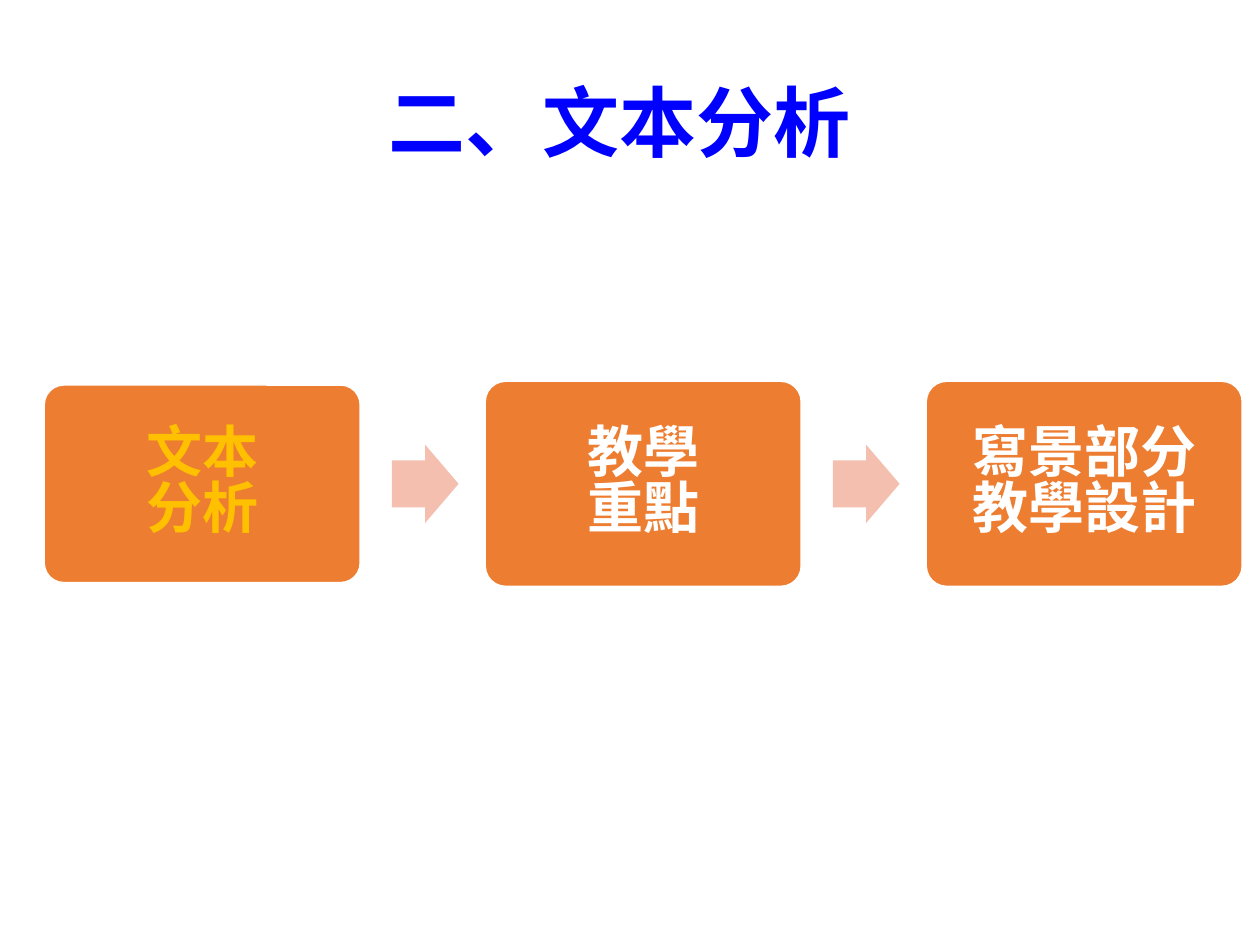
from pptx import Presentation
from pptx.dml.color import RGBColor
from pptx.enum.shapes import MSO_SHAPE
from pptx.enum.text import MSO_ANCHOR, MSO_AUTO_SIZE, PP_ALIGN
from pptx.oxml.ns import qn
from pptx.util import Inches, Pt

FONT = "Noto Sans CJK SC"
COLORS = {
    "title": "0000FF",
    "step": "ED7D31",
    "arrow": "F4BFAE",
    "active": "FFC000",
    "white": "FFFFFF",
}
# Lines of text, text colour and height of each step
STEPS = [
    (["文本", "分析"], "active", 1.57),
    (["教學", "重點"], "white", 1.63),
    (["寫景部分教學設計"], "white", 1.63),
]


def rgb(name):
    return RGBColor.from_string(COLORS[name])


def format_paragraph(p, size, color, spacing):
    p.alignment = PP_ALIGN.CENTER
    p.line_spacing = spacing
    p.font.size = Pt(size)
    p.font.bold = True
    p.font.color.rgb = rgb(color)
    p.font.name = FONT
    # East Asian text needs its own typeface element
    props = p._p.pPr.find(qn("a:defRPr"))
    ea = props.makeelement(qn("a:ea"), {"typeface": FONT})
    props.find(qn("a:latin")).addnext(ea)


def add_title(s, text, left, top, width, height):
    title = s.shapes.title
    title.left, title.top = Inches(left), Inches(top)
    title.width, title.height = Inches(width), Inches(height)
    tf = title.text_frame
    tf.text = text
    tf.auto_size = MSO_AUTO_SIZE.NONE
    tf.vertical_anchor = MSO_ANCHOR.TOP
    format_paragraph(tf.paragraphs[0], 44, "title", 0.8)


def add_block(s, kind, left, middle, width, height, fill):
    sp = s.shapes.add_shape(kind, Inches(left), Inches(middle - height / 2),
                            Inches(width), Inches(height))
    sp.shadow.inherit = False
    sp.fill.solid()
    sp.fill.fore_color.rgb = rgb(fill)
    sp.line.fill.background()
    return sp


def add_step(s, lines, color, left, middle, width, height):
    sp = add_block(s, MSO_SHAPE.ROUNDED_RECTANGLE, left, middle, width, height, "step")
    sp.adjustments[0] = 0.1
    sp.line.color.rgb = rgb("white")
    sp.line.width = Pt(1)
    tf = sp.text_frame
    tf.word_wrap = True
    tf.vertical_anchor = MSO_ANCHOR.MIDDLE
    tf.margin_left = tf.margin_right = Inches(0.18)
    tf.margin_top = tf.margin_bottom = Inches(0.18)
    tf.text = "\n".join(lines)
    for p in tf.paragraphs:
        format_paragraph(p, 32, color, 0.83)


def add_process(s, left, middle, step_width, gap):
    arrow_width, arrow_height = 0.53, 0.62
    for i, (lines, color, height) in enumerate(STEPS):
        x = left + i * (step_width + gap)
        if i:
            arrow = add_block(s, MSO_SHAPE.RIGHT_ARROW, x - gap + 0.25, middle,
                              arrow_width, arrow_height, "arrow")
            arrow.adjustments[0] = 0.6
            arrow.adjustments[1] = 0.5
        add_step(s, lines, color, x, middle, step_width, height)


def main():
    prs = Presentation()
    prs.slide_width, prs.slide_height = Inches(10), Inches(7.5)
    s = prs.slides.add_slide(prs.slide_layouts[5])

    # Heading
    add_title(s, "二、文本分析", 1.02, 0.68, 7.8, 0.94)
    # Three steps joined by arrows
    add_process(s, left=0.35, middle=3.84, step_width=2.51, gap=0.99)

    prs.save("out.pptx")


if __name__ == "__main__":
    main()
